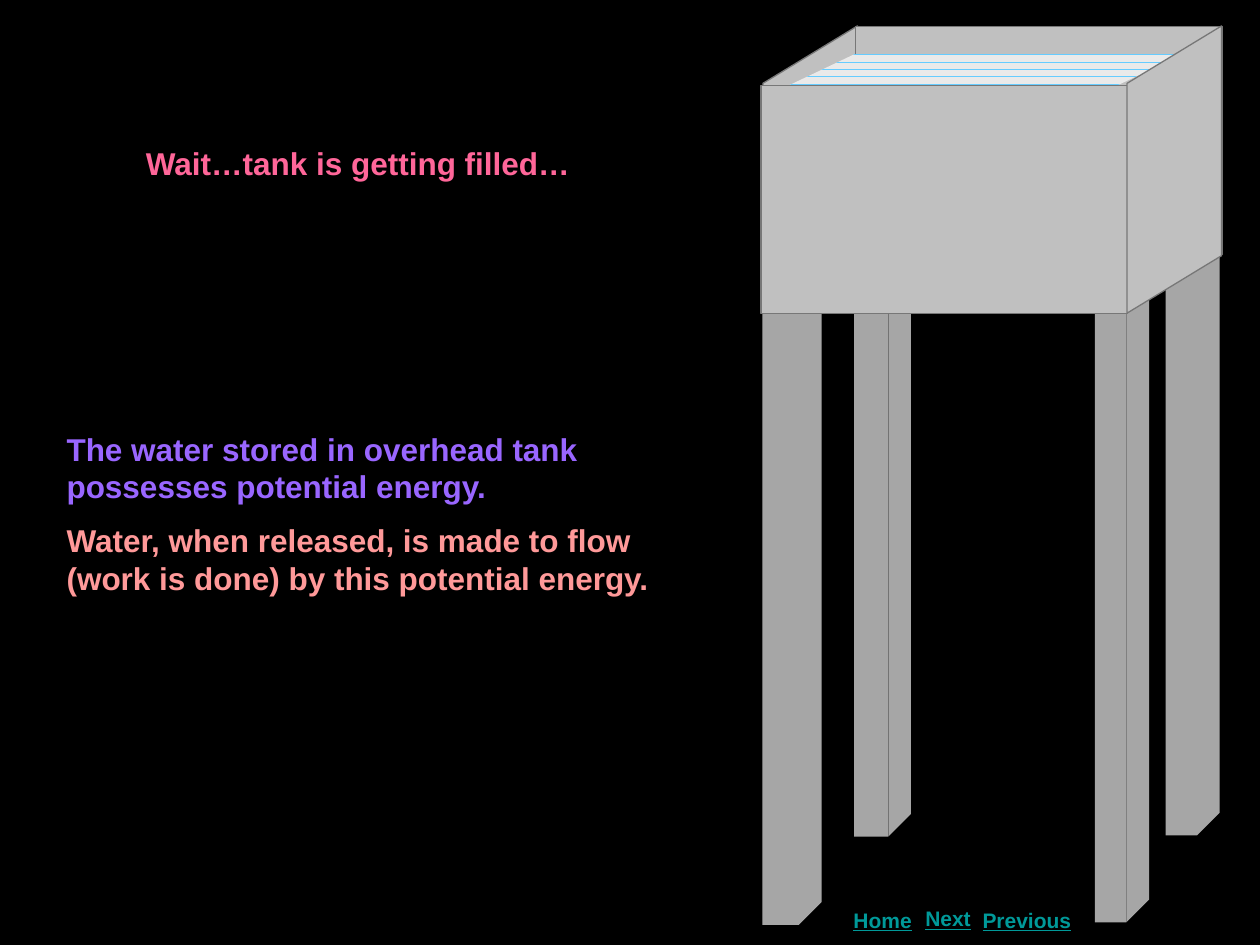
"""Build a slide showing an overhead water tank that stores potential energy."""
from pptx import Presentation
from pptx.dml.color import RGBColor
from pptx.enum.dml import MSO_PATTERN
from pptx.enum.shapes import MSO_SHAPE
from pptx.enum.text import MSO_AUTO_SIZE, PP_ALIGN
from pptx.util import Inches, Pt

COLORS = {
    "background": "000000",
    "wall": "C0C0C0",
    "edge": "777777",
    "leg": "A6A6A6",
    "ripple": "66CCFF",
    "water": "EAEAEA",
    "stored": "9966FF",
    "released": "FF9999",
    "wait": "FF6699",
    "link": "009999",
}


def color(name):
    """Return the named colour."""
    return RGBColor.from_string(COLORS[name])


def write(paragraph, text, *, tint, size=18, underline=None, align=None, before=None):
    """Fill a paragraph with formatted text."""
    run = paragraph.add_run()
    run.text = text
    font = run.font
    font.name, font.size, font.bold = "Arial", Pt(size), True
    font.underline = underline
    font.color.rgb = color(tint)
    if align is not None:
        paragraph.alignment = align
    if before is not None:
        paragraph.space_before = Pt(before)


class TankSlide:
    """Hold the style and the current slide."""

    def __init__(self, deck):
        """Add a blank slide with a dark background."""
        self.slide = deck.slides.add_slide(deck.slide_layouts[6])
        self.shapes = self.slide.shapes
        fill = self.slide.background.fill
        fill.solid()
        fill.fore_color.rgb = color("background")

    def paint(self, shape, fill, edge=None):
        """Set the fill and outline of a shape."""
        shape.shadow.inherit = False
        shape.fill.solid()
        shape.fill.fore_color.rgb = color(fill)
        if edge:
            shape.line.color.rgb = color(edge)
            shape.line.width = Pt(0.75)
        else:
            shape.line.fill.background()

    def panel(self, box, fill="wall", edge="edge"):
        """Add a rectangular face."""
        face = self.shapes.add_shape(MSO_SHAPE.RECTANGLE, *map(Inches, box))
        self.paint(face, fill, edge)

    def side_wall(self, left):
        """Add a slanted side of the tank."""
        wall = self.shapes.add_shape(
            MSO_SHAPE.FLOWCHART_DATA, Inches(left), Inches(0.97), Inches(2.28), Inches(0.75))
        wall.rotation = 90
        wall._element.spPr.xfrm.set("flipV", "1")
        self.paint(wall, "wall", "edge")

    def water(self, box):
        """Add the rippled water surface."""
        surface = self.shapes.add_shape(MSO_SHAPE.FLOWCHART_DATA, *map(Inches, box))
        surface.shadow.inherit = False
        surface.fill.patterned()
        surface.fill.pattern = MSO_PATTERN.DASHED_HORIZONTAL
        surface.fill.fore_color.rgb = color("ripple")
        surface.fill.back_color.rgb = color("water")
        surface.line.fill.background()

    def leg(self, left, top, width, height=5.48, depth=0.18):
        """Add a leg with a front face and a receding side."""
        self.panel((left, top, width, height), "leg", None)
        right, bottom = left + width, top + height
        outline = self.shapes.build_freeform(Inches(right), Inches(top))
        outline.add_line_segments([
            (Inches(right + depth), Inches(top - depth)),
            (Inches(right + depth), Inches(bottom - depth)),
            (Inches(right), Inches(bottom)),
        ])
        self.paint(outline.convert_to_shape(), "leg")

    def text(self, box, *lines, wrap=True, **style):
        """Add a text box with one paragraph per line and tint."""
        frame = self.shapes.add_textbox(*map(Inches, box)).text_frame
        frame.word_wrap = wrap
        frame.auto_size = MSO_AUTO_SIZE.SHAPE_TO_FIT_TEXT
        for index, (line, tint) in enumerate(lines):
            paragraph = frame.add_paragraph() if index else frame.paragraphs[0]
            write(paragraph, line, tint=tint, before=9 if index else None, **style)


def main():
    """Build and save the deck."""
    deck = Presentation()
    deck.slide_width, deck.slide_height = Inches(10), Inches(7.5)
    tank = TankSlide(deck)

    for leg in ((9.25, 1.15, 0.25), (6.78, 1.16, 0.27), (8.69, 1.84, 0.25), (6.05, 1.86, 0.29)):
        tank.leg(*leg)
    tank.side_wall(5.29)
    tank.panel((6.79, 0.21, 2.91, 1.81))
    tank.water((6.13, 0.43, 3.26, 0.31))
    tank.panel((6.04, 0.68, 2.91, 1.81))
    tank.side_wall(8.18)

    tank.text(
        (0.43, 3.36, 5.12, 1.45),
        ("The water stored in overhead tank possesses potential energy.", "stored"),
        ("Water, when released, is made to flow (work is done) by this potential energy.",
         "released"),
    )
    tank.text((1.06, 1.09, 3.6, 0.4), ("Wait…tank is getting filled…", "wait"), wrap=False)
    for label, left, top, width in (
        ("Home", 6.65, 7.15, 0.71), ("Next", 7.21, 7.14, 0.63), ("Previous", 7.68, 7.15, 0.94),
    ):
        tank.text((left, top, width, 0.3), (label, "link"),
                  size=12, underline=True, align=PP_ALIGN.CENTER)

    deck.save("out.pptx")


if __name__ == "__main__":
    main()
